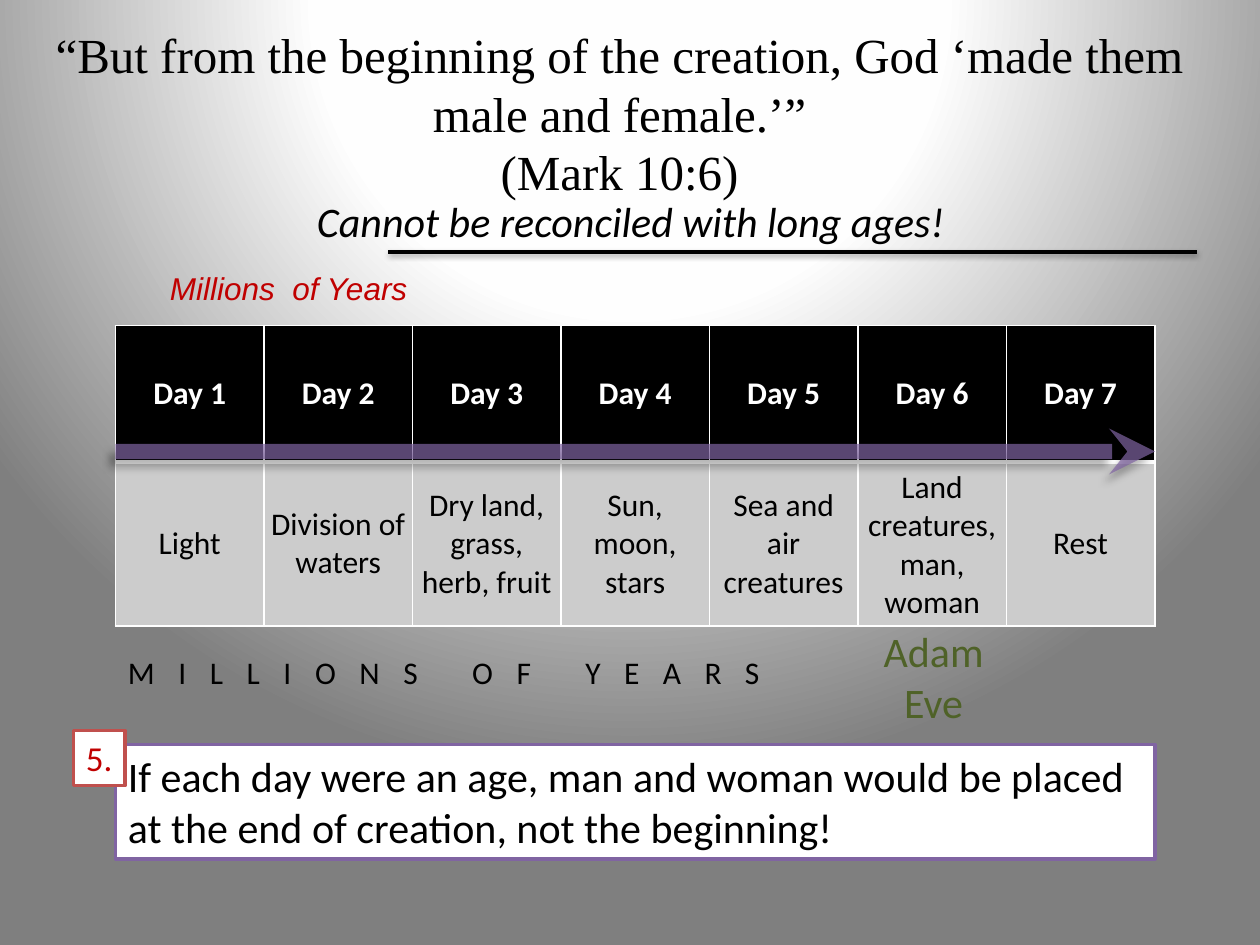
from lxml import etree
from pptx import Presentation
from pptx import util as u
from pptx.dml.color import RGBColor
from pptx.enum import shapes, text
from pptx.oxml import ns

Pt = u.Pt
BLACK = RGBColor(0x00, 0x00, 0x00)
WHITE = RGBColor(0xFF, 0xFF, 0xFF)
GREY = RGBColor(0xCC, 0xCC, 0xCC)
PURPLE = RGBColor(0x80, 0x64, 0xA2)
RED = RGBColor(0xC0, 0x00, 0x00)
ROSE = RGBColor(0xC0, 0x50, 0x4D)
GREEN = RGBColor(0x4F, 0x62, 0x28)
LEFT, WIDTH = 66, 594  # shared by the table, the arrow and the conclusion


def sub(parent, tag, **attrs):
    """Append a DrawingML element."""
    e = etree.SubElement(parent, ns.qn("a:" + tag))
    for name, value in attrs.items():
        e.set(name, str(value))
    return e


class Deck:
    font = "Calibri"

    def __init__(self, width, height):
        self.prs = Presentation()
        self.prs.slide_width, self.prs.slide_height = Pt(width), Pt(height)
        self.s = self.prs.slides.add_slide(self.prs.slide_layouts[6])

    def background(self, stops, top, bottom):
        """Fill the background with a circular gradient."""
        self.s.background.fill.gradient()
        grad = self.s._element.find(".//" + ns.qn("a:gradFill"))
        for child in list(grad):
            grad.remove(child)
        gs_list = sub(grad, "gsLst")
        for pos, color in stops:
            sub(sub(gs_list, "gs", pos=pos * 1000), "srgbClr", val=color)
        circle = sub(grad, "path", path="circle")
        sub(circle, "fillToRect", l=50000, t=top * 1000, r=50000, b=bottom * 1000)

    def put_text(self, tf, words, size, color, font=None, bold=False,
                 italic=False, center=False):
        p = tf.paragraphs[0]
        p.text = words
        p.alignment = text.PP_ALIGN.CENTER if center else text.PP_ALIGN.LEFT
        f = p.font
        f.name, f.size, f.bold, f.italic = font or self.font, Pt(size), bold, italic
        f.color.rgb = color
        return p

    def text(self, x, y, w, h, words, size, color, spacing=0, wrap=False,
             middle=False, **style):
        tf = self.s.shapes.add_textbox(Pt(x), Pt(y), Pt(w), Pt(h)).text_frame
        tf.word_wrap = wrap
        if middle:
            tf.vertical_anchor = text.MSO_ANCHOR.MIDDLE
        else:
            tf.auto_size = text.MSO_AUTO_SIZE.SHAPE_TO_FIT_TEXT
        p = self.put_text(tf, words, size, color, **style)
        if spacing:
            for r in p.runs:
                r._r.get_or_add_rPr().set("spc", str(int(spacing * 100)))

    def box(self, x, y, w, h, words, size, color, border, wrap=True):
        sp = self.s.shapes.add_shape(shapes.MSO_SHAPE.RECTANGLE,
                                     Pt(x), Pt(y), Pt(w), Pt(h))
        sp.shadow.inherit = False
        sp.fill.solid()
        sp.fill.fore_color.rgb = WHITE
        sp.line.color.rgb = border
        sp.line.width = Pt(2)
        tf = sp.text_frame
        tf.word_wrap = wrap
        tf.vertical_anchor = text.MSO_ANCHOR.TOP
        tf.auto_size = text.MSO_AUTO_SIZE.SHAPE_TO_FIT_TEXT
        self.put_text(tf, words, size, color)

    def line(self, x1, x2, y, color, width, shadow, alpha=None, arrow=False):
        """Horizontal line; shadow is (opacity, blur, distance, angle)."""
        c = self.s.shapes.add_connector(shapes.MSO_CONNECTOR.STRAIGHT,
                                        Pt(x1), Pt(y), Pt(x2), Pt(y))
        c.line.color.rgb = color
        c.line.width = Pt(width)
        ln = c._element.spPr.find(ns.qn("a:ln"))
        if alpha:
            sub(ln.find(".//" + ns.qn("a:srgbClr")), "alpha", val=alpha * 1000)
        if arrow:
            sub(ln, "tailEnd", type="stealth")
        opacity, blur, dist, angle = shadow
        outer = sub(sub(c._element.spPr, "effectLst"), "outerShdw",
                    blurRad=Pt(blur), dist=Pt(dist), dir=angle * 60000,
                    rotWithShape=0)
        sub(sub(outer, "srgbClr", val=BLACK), "alpha", val=opacity * 1000)

    def table(self, x, y, w, heights, rows, styles):
        """Each row style is (fill, font colour, bold, bottom border width)."""
        n = len(rows[0])
        t = self.s.shapes.add_table(len(rows), n, Pt(x), Pt(y), Pt(w),
                                    Pt(sum(heights))).table
        for col in t.columns:
            col.width = Pt(w / n)
        for i, (words, (fill, color, bold, bottom)) in enumerate(zip(rows, styles)):
            t.rows[i].height = Pt(heights[i])
            top = styles[i - 1][3] if i else 1
            for j, word in enumerate(words):
                cell = t.cell(i, j)
                cell.margin_left = cell.margin_right = Pt(3.6)
                cell.margin_top = cell.margin_bottom = Pt(3.6)
                cell.vertical_anchor = text.MSO_ANCHOR.MIDDLE
                tc_pr = cell._tc.get_or_add_tcPr()
                for side, width in zip("LRTB", (1, 1, top, bottom)):
                    ln = sub(tc_pr, "ln" + side, w=Pt(width))
                    sub(sub(ln, "solidFill"), "srgbClr", val=WHITE)
                cell.fill.solid()
                cell.fill.fore_color.rgb = fill
                self.put_text(cell.text_frame, word, 18, color, bold=bold,
                              center=True)


def main():
    d = Deck(720, 540)
    d.background([(0, "FFFFFF"), (40, "FEFEFE"), (100, "7F7F7F")], -80, 180)

    # Rule and quotation
    d.line(222, 684, 144, BLACK, 2, (38, 3.1, 1.6, 90))
    d.text(24, 6, 660, 116.5,
           "“But from the beginning of the creation, God ‘made them male and "
           "female.’”\v(Mark 10:6)", 28, BLACK, font="Times New Roman",
           wrap=True, middle=True, center=True)

    # Conclusion
    d.box(LEFT, 425.5, WIDTH, 65.5,
          "If each day were an age, man and woman would be placed at the end of "
          "creation, not the beginning!", 24, BLACK, PURPLE)

    # Days of creation
    days = [f"Day {n}" for n in range(1, 8)]
    works = ["Light", "Division of waters", "Dry land, grass, herb, fruit",
             "Sun, moon, stars", "Sea and air creatures",
             "Land creatures, man, woman", "Rest"]
    d.table(LEFT, 186, WIDTH, [78, 93.5], [days, works],
            [(BLACK, WHITE, True, 3), (GREY, BLACK, False, 1)])

    # Timeline and captions
    d.text(174, 108, 378, 36, "Cannot be reconciled with long ages!", 24, BLACK,
           italic=True)
    d.line(LEFT, LEFT + WIDTH, 258, PURPLE, 8.75, (40, 4, 6, 135), alpha=70,
           arrow=True)
    d.text(90, 150, 528, 35, "Millions  of Years", 18, RED, font="Arial", italic=True)
    d.text(LEFT, 369.5, 393, 29, "MILLIONS OF YEARS", 18, BLACK, spacing=13.5)
    d.text(497.5, 354, 72, 65.5, "Adam\vEve", 24, GREEN, center=True)

    # Number of the argument
    d.box(42, 417.5, 29.5, 31.5, "5.", 20, RED, ROSE, wrap=False)

    d.prs.save("out.pptx")


if __name__ == "__main__":
    main()
